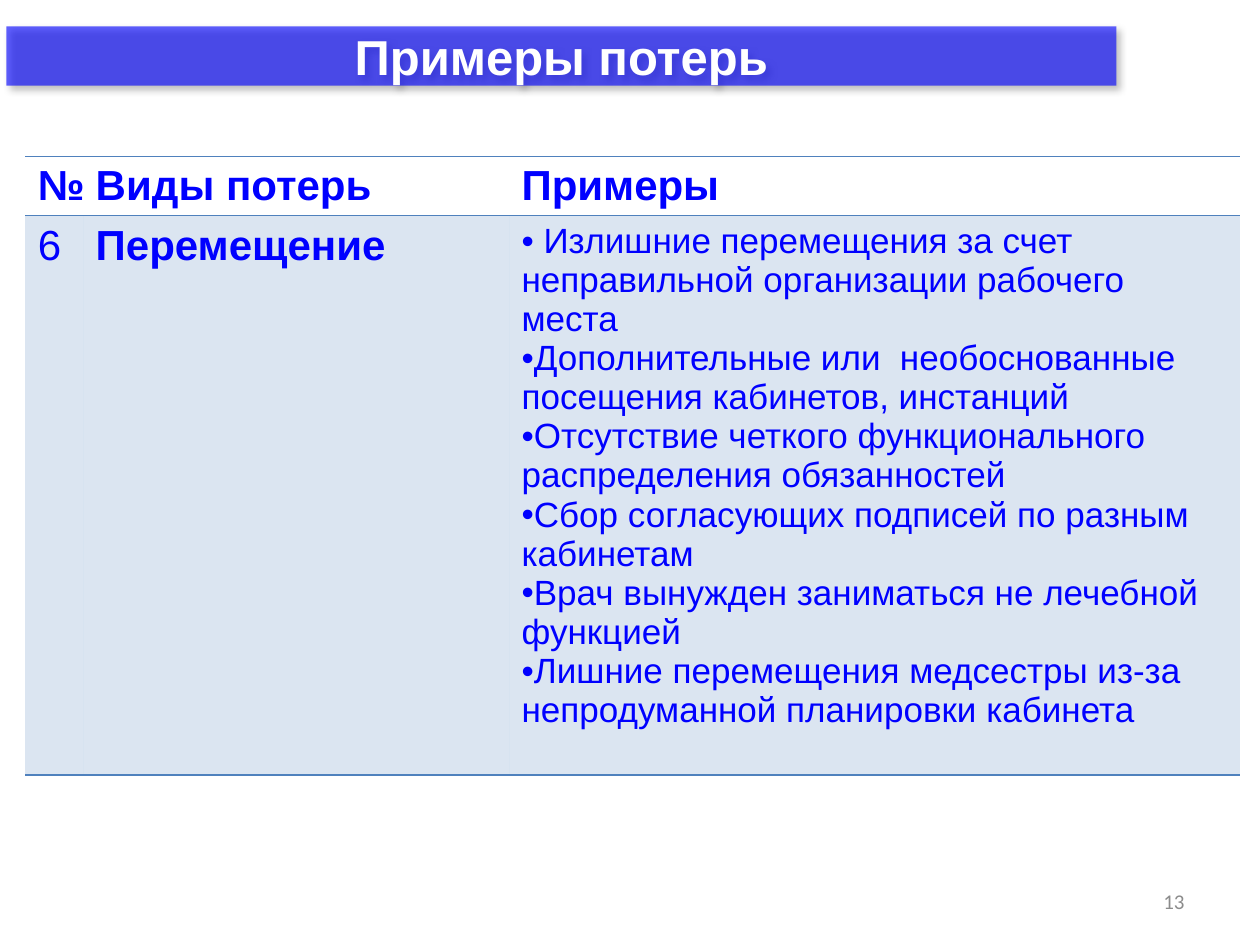
from dataclasses import dataclass

from lxml.etree import SubElement
from pptx import Presentation
from pptx.dml.color import RGBColor as Color
from pptx.enum.text import MSO_ANCHOR as Anchor, MSO_AUTO_SIZE as AutoSize, PP_ALIGN as Align
from pptx.oxml.ns import qn
from pptx.util import Inches, Pt


@dataclass(frozen=True)
class Theme:
    font: str = "Arial"
    number_font: str = "Calibri"
    blue: str = "0000FF"
    accent: str = "4F81BD"
    white: str = "FFFFFF"
    grey: str = "8C8C8C"
    shadow: str = "000000"
    title_size: int = 28
    heading_size: int = 24
    body_size: int = 20
    number_size: int = 12
    banner_opacity: int = 62
    row_opacity: int = 20
    shadow_opacity: int = 40
    plain_table_style: str = "{2D5ABB26-0587-4C30-8999-92F81FD0307C}"


HEADINGS = ["№", "Виды потерь", "Примеры"]
EXAMPLES = [
    " Излишние перемещения за счет неправильной организации рабочего места",
    "Дополнительные или  необоснованные посещения кабинетов, инстанций",
    "Отсутствие четкого функционального распределения обязанностей",
    "Сбор согласующих подписей по разным кабинетам",
    "Врач вынужден заниматься не лечебной функцией",
    "Лишние перемещения медсестры из-за непродуманной планировки кабинета",
]


def add_element(parent, tag, **attributes):
    return SubElement(parent, qn(tag), {key: str(value) for key, value in attributes.items()})


def add_color(parent, color, opacity=100):
    element = add_element(parent, "a:srgbClr", val=color)
    add_element(element, "a:alpha", val=opacity * 1000)


def fill_translucent(fill, properties, color, opacity):
    fill.solid()
    fill.fore_color.rgb = Color.from_string(color)
    color_element = properties.find(qn("a:solidFill")).find(qn("a:srgbClr"))
    add_element(color_element, "a:alpha", val=opacity * 1000)


class SlideBuilder:
    def __init__(self, slide, theme):
        self.slide = slide
        self.theme = theme

    def format_runs(self, paragraph, size, color, bold=False, font=None):
        for run in paragraph.runs:
            run.font.name = font or self.theme.font
            run.font.size = Pt(size)
            run.font.bold = bold
            run.font.color.rgb = Color.from_string(color)

    def banner_title(self, text, left, top, width, height):
        theme = self.theme
        title = self.slide.shapes.title
        title.left, title.top, title.width, title.height = map(Inches, (left, top, width, height))
        properties = title.element.spPr
        geometry = add_element(properties, "a:prstGeom", prst="roundRect")
        add_element(geometry, "a:avLst")
        fill_translucent(title.fill, properties, theme.blue, theme.banner_opacity)
        title.line.fill.background()
        # Soft shadow to the lower right
        effects = add_element(properties, "a:effectLst")
        shadow = add_element(effects, "a:outerShdw", blurRad=Pt(4), dist=Pt(3),
                             dir=45 * 60000, algn="tl", rotWithShape=0)
        add_color(shadow, theme.shadow, theme.shadow_opacity)

        frame = title.text_frame
        frame.text = text
        frame.auto_size = AutoSize.NONE
        frame.vertical_anchor = Anchor.MIDDLE
        frame.paragraphs[0].alignment = Align.CENTER
        self.format_runs(frame.paragraphs[0], theme.title_size, theme.white, bold=True)

    def table(self, left, top, column_widths, row_heights):
        frame = self.slide.shapes.add_table(
            len(row_heights), len(column_widths), Inches(left), Inches(top),
            Inches(sum(column_widths)), Inches(sum(row_heights)))
        table = frame.table
        table.horz_banding = False
        table._tbl.tblPr.find(qn("a:tableStyleId")).text = self.theme.plain_table_style
        for column, width in zip(table.columns, column_widths):
            column.width = Inches(width)
        for row, height in zip(table.rows, row_heights):
            row.height = Inches(height)
        return table

    def cell(self, cell, lines, size, bold=False, edges="B", shaded=False,
             bullet=None, hanging=0):
        theme = self.theme
        properties = cell._tc.get_or_add_tcPr()
        for edge in edges:
            line = add_element(properties, f"a:ln{edge}", w=Pt(1))
            add_color(add_element(line, "a:solidFill"), theme.accent)
        if shaded:
            fill_translucent(cell.fill, properties, theme.accent, theme.row_opacity)
        else:
            cell.fill.background()

        cell.text_frame.text = "\n".join(lines)
        for paragraph in cell.text_frame.paragraphs:
            paragraph_properties = paragraph._p.get_or_add_pPr()
            paragraph_properties.set("marL", str(Inches(hanging)))
            paragraph_properties.set("indent", str(-Inches(hanging)))
            if bullet:
                add_element(paragraph_properties, "a:buFont", typeface=theme.font)
                add_element(paragraph_properties, "a:buChar", char=bullet)
            self.format_runs(paragraph, size, theme.blue, bold)

    def page_number(self, text, left, top, width, height):
        box = self.slide.shapes.add_textbox(*map(Inches, (left, top, width, height)))
        frame = box.text_frame
        frame.word_wrap = True
        frame.vertical_anchor = Anchor.MIDDLE
        frame.text = text
        frame.paragraphs[0].alignment = Align.RIGHT
        self.format_runs(frame.paragraphs[0], self.theme.number_size, self.theme.grey,
                         font=self.theme.number_font)


def main():
    presentation = Presentation()
    presentation.slide_width, presentation.slide_height = Inches(10), Inches(7.5)
    title_only = presentation.slide_layouts[5]
    theme = Theme()
    builder = SlideBuilder(presentation.slides.add_slide(title_only), theme)

    # Title banner
    builder.banner_title("Примеры потерь", 0.05, 0.21, 8.81, 0.47)

    # Table of losses: heading row, then the shaded row
    table = builder.table(0.2, 1.24, [0.46, 3.38, 5.8], [0.47, 4.44])
    for column, heading in enumerate(HEADINGS):
        builder.cell(table.cell(0, column), [heading], theme.heading_size, bold=True, edges="TB")
    builder.cell(table.cell(1, 0), ["6"], theme.heading_size, shaded=True)
    builder.cell(table.cell(1, 1), ["Перемещение"], theme.heading_size, bold=True,
                 shaded=True, hanging=0.38)
    builder.cell(table.cell(1, 2), EXAMPLES, theme.body_size, shaded=True, bullet="•")

    # Page number
    builder.page_number("13", 7.17, 6.95, 2.33, 0.4)

    presentation.save("out.pptx")


if __name__ == "__main__":
    main()
